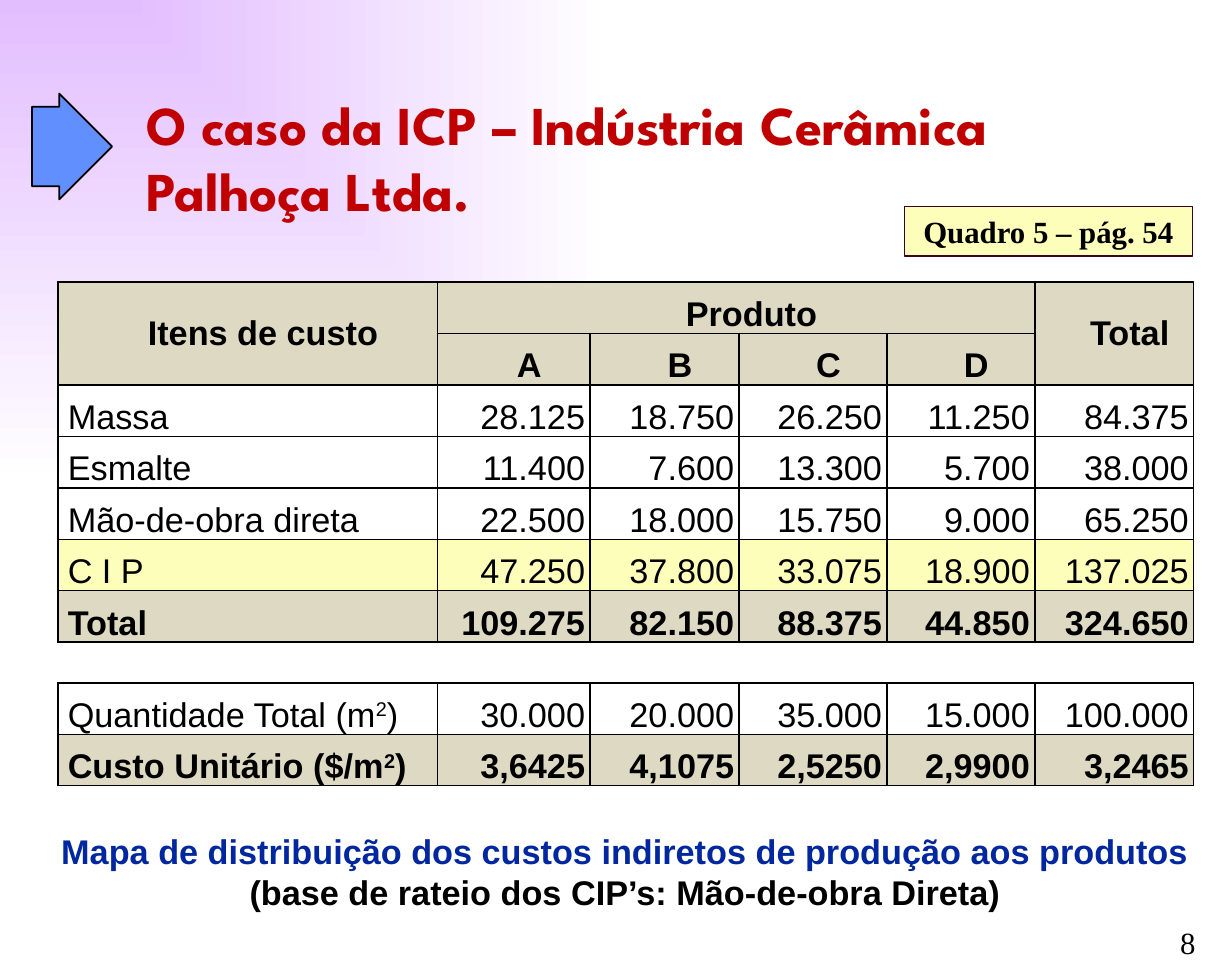
"""Build the slide with the indirect cost distribution table of a ceramics company."""
import pptx
import pptx.util
import pptx.dml.color
import pptx.enum.shapes
import pptx.enum.text
import pptx.oxml
import pptx.oxml.ns
import lxml.etree

Inches, Pt = pptx.util.Inches, pptx.util.Pt
RGB = pptx.dml.color.RGBColor.from_string
ALIGN = pptx.enum.text.PP_ALIGN
ANCHOR = pptx.enum.text.MSO_ANCHOR
GROW = pptx.enum.text.MSO_AUTO_SIZE.SHAPE_TO_FIT_TEXT
SHAPE = pptx.enum.shapes.MSO_SHAPE
qn = pptx.oxml.ns.qn

THEME = {
    "lavender": "E3BEFF", "white": "FFFFFF", "black": "000000", "red": "C00000",
    "blue": "00279F", "arrow": "618FFD", "beige": "DDD9C3", "yellow": "FCFEB9",
    "plum": "3C0023", "sans": "Arial", "serif": "Times New Roman",
    "display": "League Spartan", "title": 32, "body": 20, "small": 18,
}

TITLE = "O caso da ICP – Indústria Cerâmica Palhoça Ltda."
BADGE = "Quadro 5 – pág. 54"
CAPTION = [
    ("Mapa de distribuição dos custos indiretos de produção aos produtos", "blue"),
    ("(base de rateio dos CIP’s: Mão-de-obra Direta)", "black"),
]
PAGE = "8"

STYLES = {"head": ("beige", True), "plain": ("white", False),
          "mark": ("yellow", False), "sum": ("beige", True), "gap": (None, False)}
ROWS = [
    ("head", ["Itens de custo", "Produto", "", "", "", "Total"]),
    ("head", ["", "A", "B", "C", "D", ""]),
    ("plain", ["Massa", "28.125", "18.750", "26.250", "11.250", "84.375"]),
    ("plain", ["Esmalte", "11.400", "7.600", "13.300", "5.700", "38.000"]),
    ("plain", ["Mão-de-obra direta", "22.500", "18.000", "15.750", "9.000", "65.250"]),
    ("mark", ["C I P", "47.250", "37.800", "33.075", "18.900", "137.025"]),
    ("sum", ["Total", "109.275", "82.150", "88.375", "44.850", "324.650"]),
    ("gap", [""] * 6),
    ("plain", ["Quantidade Total (m²)", "30.000", "20.000", "35.000", "15.000", "100.000"]),
    ("sum", ["Custo Unitário ($/m²)", "3,6425", "4,1075", "2,5250", "2,9900", "3,2465"]),
]
MERGES = [((0, 0), (1, 0)), ((0, 1), (0, 4)), ((0, 5), (1, 5))]
COLS = [3.08, 1.24, 1.21, 1.2, 1.2, 1.29]
TABLE_BOX = (0.47, 2.29, 9.22, 4.09)
GAP_H = 0.33


def inches(box):
    return [Inches(v) for v in box]


def assign(obj, values):
    for name, value in values.items():
        setattr(obj, name, value)


def add_run(p, text, size, font, color, bold=False):
    r = p.add_run()
    r.text = text
    assign(r.font, {"size": Pt(THEME[size]), "name": THEME[font], "bold": bold})
    r.font.color.rgb = RGB(THEME[color])
    return r


def write(sp, lines, size, font, bold=True, align=ALIGN.CENTER, wrap=True):
    tf = sp.text_frame
    assign(tf, {"word_wrap": wrap, "auto_size": GROW})
    for i, (text, color) in enumerate(lines):
        p = tf.add_paragraph() if i else tf.paragraphs[0]
        p.alignment = align
        add_run(p, text, size, font, color, bold)


def add_text(s, box, *args, **kwargs):
    write(s.shapes.add_textbox(*inches(box)), *args, **kwargs)


def add_preset(s, preset, box, fill, line, width):
    sp = s.shapes.add_shape(preset, *inches(box))
    sp.shadow.inherit = False
    sp.fill.solid()
    sp.fill.fore_color.rgb = RGB(THEME[fill])
    sp.line.color.rgb = RGB(THEME[line])
    sp.line.width = Pt(width)
    return sp


def paint_background(s):
    fill = s.background.fill
    fill.gradient()
    for stop, color, pos in zip(fill.gradient_stops, ("lavender", "white"), (0, 1)):
        stop.color.rgb = RGB(THEME[color])
        stop.position = pos
    lin = next(s.element.iter(qn("a:lin")))
    rect = lxml.etree.Element(qn("a:path"), {"path": "rect"})
    lxml.etree.SubElement(rect, qn("a:fillToRect"), {"r": "100000", "b": "100000"})
    lin.getparent().replace(lin, rect)


def set_borders(cell, sides):
    tc_pr = cell._tc.get_or_add_tcPr()
    for i, side in enumerate("LRTB"):
        ln = lxml.etree.Element(qn("a:ln" + side), {"w": str(Pt(1))})
        if side in sides:
            solid = lxml.etree.SubElement(ln, qn("a:solidFill"))
            lxml.etree.SubElement(solid, qn("a:srgbClr"), {"val": THEME["black"]})
        else:
            lxml.etree.SubElement(ln, qn("a:noFill"))
        tc_pr.insert(i, ln)


def fill_cell(cell, text, style, col):
    color, bold = STYLES[style]
    head = style == "head"
    assign(cell, {"margin_left": Inches(0.04), "margin_right": Inches(0.04),
                  "margin_top": 0, "margin_bottom": 0,
                  "vertical_anchor": ANCHOR.MIDDLE if head and col in (0, 5) else ANCHOR.BOTTOM})
    if color:
        cell.fill.solid()
        cell.fill.fore_color.rgb = RGB(THEME[color])
    else:
        cell.fill.background()
    set_borders(cell, "LRTB" if color else "TB")
    if not text:
        return
    p = cell.text_frame.paragraphs[0]
    p.alignment = ALIGN.CENTER if head else ALIGN.RIGHT if col else ALIGN.JUSTIFY
    indent = {"marL": str(Inches(0.25 if head else 0.04)), "indent": "0"}
    for name, value in indent.items():
        p._p.get_or_add_pPr().set(name, value)
    before, square, after = text.partition("²")
    add_run(p, before, "body", "sans", "black", bold)
    if square:
        r = add_run(p, "2", "body", "sans", "black", bold)
        r.font._element.set("baseline", "30000")
        add_run(p, after, "body", "sans", "black", bold)


def add_cost_table(s):
    table = s.shapes.add_table(len(ROWS), len(COLS), *inches(TABLE_BOX)).table
    assign(table, {"first_row": False, "horz_banding": False})
    row_h = (TABLE_BOX[3] - GAP_H) / (len(ROWS) - 1)
    for column, width in zip(table.columns, COLS):
        column.width = Inches(width)
    for i, (style, texts) in enumerate(ROWS):
        table.rows[i].height = Inches(GAP_H if style == "gap" else row_h)
        for j, text in enumerate(texts):
            fill_cell(table.cell(i, j), text, style, j)
    for first, last in MERGES:
        table.cell(*first).merge(table.cell(*last))


def main():
    prs = pptx.Presentation()
    prs.slide_width = Inches(10)
    prs.slide_height = Inches(95 / 12)
    s = prs.slides.add_slide(prs.slide_layouts[6])
    paint_background(s)
    add_text(s, (9.48, 7.45, 0.57, 0.4), [(PAGE, "black")], "small", "serif",
             bold=False, align=ALIGN.LEFT, wrap=False)
    add_text(s, (1.09, 0.69, 8.16, 1.18), [(TITLE, "red")], "title", "display",
             align=ALIGN.LEFT)
    add_preset(s, SHAPE.RIGHT_ARROW, (0.26, 0.76, 0.65, 0.86), "arrow", "black", 1)
    arrow = s.shapes[-1]
    arrow.adjustments[0], arrow.adjustments[1] = 0.75, 0.66
    add_cost_table(s)
    add_text(s, (0.31, 6.69, 9.53, 0.77), CAPTION, "body", "sans")
    badge = add_preset(s, SHAPE.RECTANGLE, (7.34, 1.68, 2.34, 0.4), "yellow", "plum", 0.75)
    write(badge, [(BADGE, "black")], "small", "serif")
    prs.save("out.pptx")


if __name__ == "__main__":
    main()
